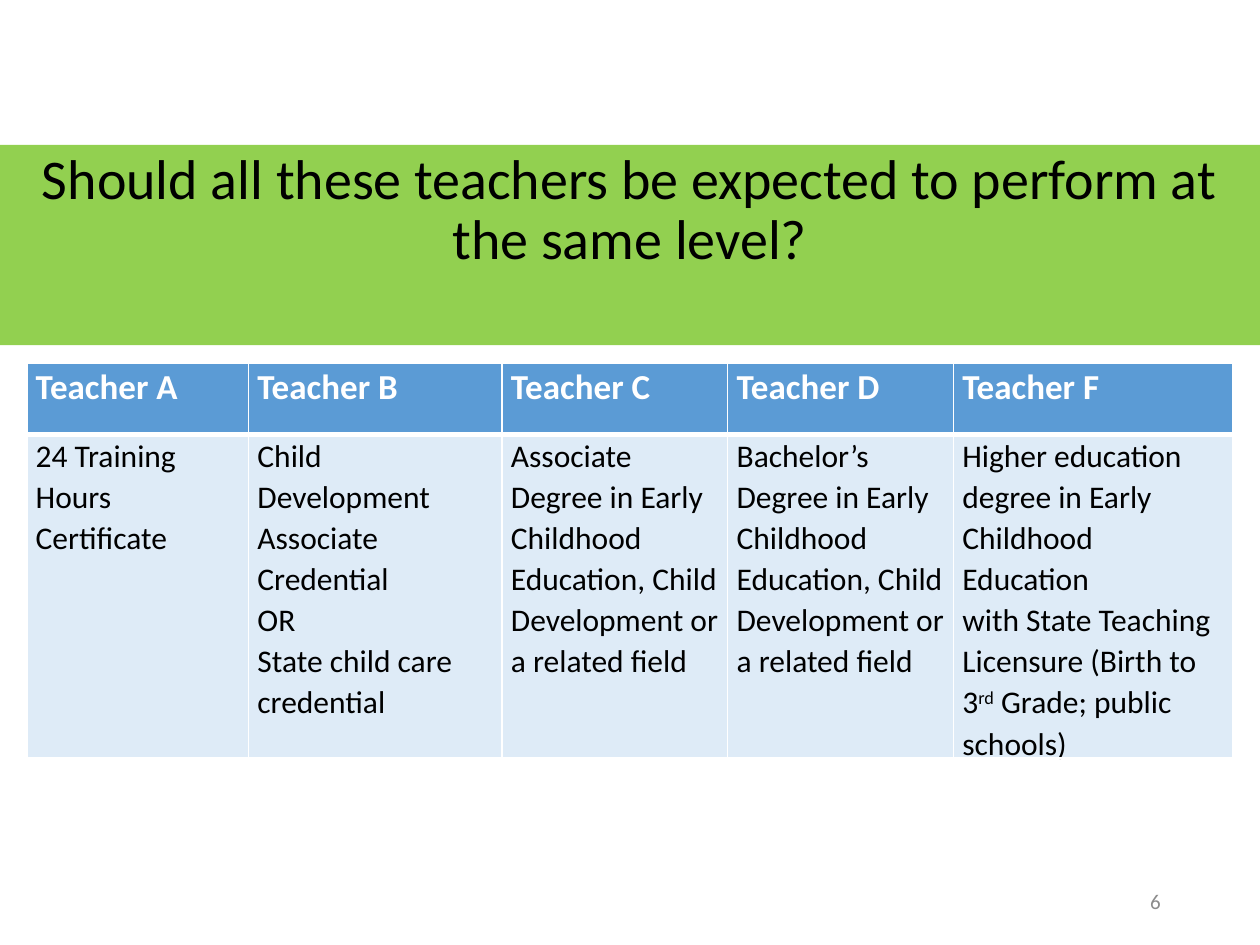
from lxml import etree
from pptx import Presentation
from pptx import util as u
from pptx.dml.color import RGBColor
from pptx.enum import shapes, text
from pptx.oxml.ns import qn


def add_run(paragraph, words, size, color, bold=False):
    run = paragraph.add_run()
    run.text = words
    run.font.name = "Calibri"
    run.font.size = u.Pt(size)
    run.font.bold = bold
    run.font.color.rgb = RGBColor.from_string(color)
    return run


def add_border(cell, side, width):
    """Draw a white line on one side (L, R, T or B); call before filling the cell."""
    properties = cell._tc.get_or_add_tcPr()
    line = etree.SubElement(properties, qn(f"a:ln{side}"), w=str(u.Pt(width)))
    fill = etree.SubElement(line, qn("a:solidFill"))
    etree.SubElement(fill, qn("a:srgbClr"), val="FFFFFF")


presentation = Presentation()
presentation.slide_width = u.Cm(25.4)
presentation.slide_height = u.Cm(19.05)
slide = presentation.slides.add_slide(presentation.slide_layouts[6])

# Title band
band = slide.shapes.add_shape(
    shapes.MSO_SHAPE.RECTANGLE, u.Cm(0), u.Cm(2.92), u.Cm(25.4), u.Cm(4.04))
band.shadow.inherit = False
band.fill.solid()
band.fill.fore_color.rgb = RGBColor.from_string("92D050")
band.line.fill.background()
band.text_frame.word_wrap = True
band.text_frame.vertical_anchor = text.MSO_ANCHOR.TOP
paragraph = band.text_frame.paragraphs[0]
paragraph.alignment = text.PP_ALIGN.CENTER
paragraph.line_spacing = 0.9
add_run(paragraph, "Should all these teachers be expected to perform at the same level?",
        32, "000000")

# Slide number
number = slide.shapes.add_textbox(u.Cm(17.93), u.Cm(17.65), u.Cm(5.72), u.Cm(1.02))
number.text_frame.word_wrap = True
number.text_frame.vertical_anchor = text.MSO_ANCHOR.MIDDLE
paragraph = number.text_frame.paragraphs[0]
paragraph.alignment = text.PP_ALIGN.RIGHT
add_run(paragraph, "6", 12, "8C8C8C")

# Teachers: heading, column width in cm, paragraphs of runs
related = "Degree in Early Childhood Education, Child Development or a related field"
teachers = [
    ("Teacher A", 4.47, [["24 Training Hours Certificate"]]),
    ("Teacher B", 5.11, [["Child Development Associate Credential"], ["OR"],
                         ["State child care credential"]]),
    ("Teacher C", 4.55, [["Associate " + related]]),
    ("Teacher D", 4.55, [["Bachelor’s " + related]]),
    ("Teacher F", 5.64, [["Higher education degree in Early Childhood Education"],
                         ["with State Teaching Licensure (Birth to 3", "rd",
                          " Grade; public schools)"]]),
]
row_heights = [1.44, 6.5]
table = slide.shapes.add_table(
    2, len(teachers), u.Cm(0.54), u.Cm(7.32),
    u.Cm(sum(width for _, width, _ in teachers)), u.Cm(sum(row_heights))).table
for row, height in zip(table.rows, row_heights):
    row.height = u.Cm(height)

# Row style: fill, text colour, size, bold, top and bottom border widths
row_styles = [("5B9BD5", "FFFFFF", 20, True, 1, 3),
              ("DEEBF7", "000000", 18, False, 3, 1)]
for column, (heading, width, qualification) in enumerate(teachers):
    table.columns[column].width = u.Cm(width)
    for row, content in enumerate([[[heading]], qualification]):
        fill, color, size, bold, top, bottom = row_styles[row]
        cell = table.cell(row, column)
        cell.margin_left = cell.margin_right = u.Cm(0.18)
        cell.margin_top = cell.margin_bottom = u.Cm(0)
        for side, thickness in zip("LRTB", (1, 1, top, bottom)):
            add_border(cell, side, thickness)
        cell.fill.solid()
        cell.fill.fore_color.rgb = RGBColor.from_string(fill)
        for index, runs in enumerate(content):
            frame = cell.text_frame
            paragraph = frame.add_paragraph() if index else frame.paragraphs[0]
            paragraph.line_spacing = 1.07
            for words in runs:
                run = add_run(paragraph, words, size, color, bold)
                if words == "rd":
                    run._r.get_or_add_rPr().set("baseline", "30000")

presentation.save("out.pptx")
